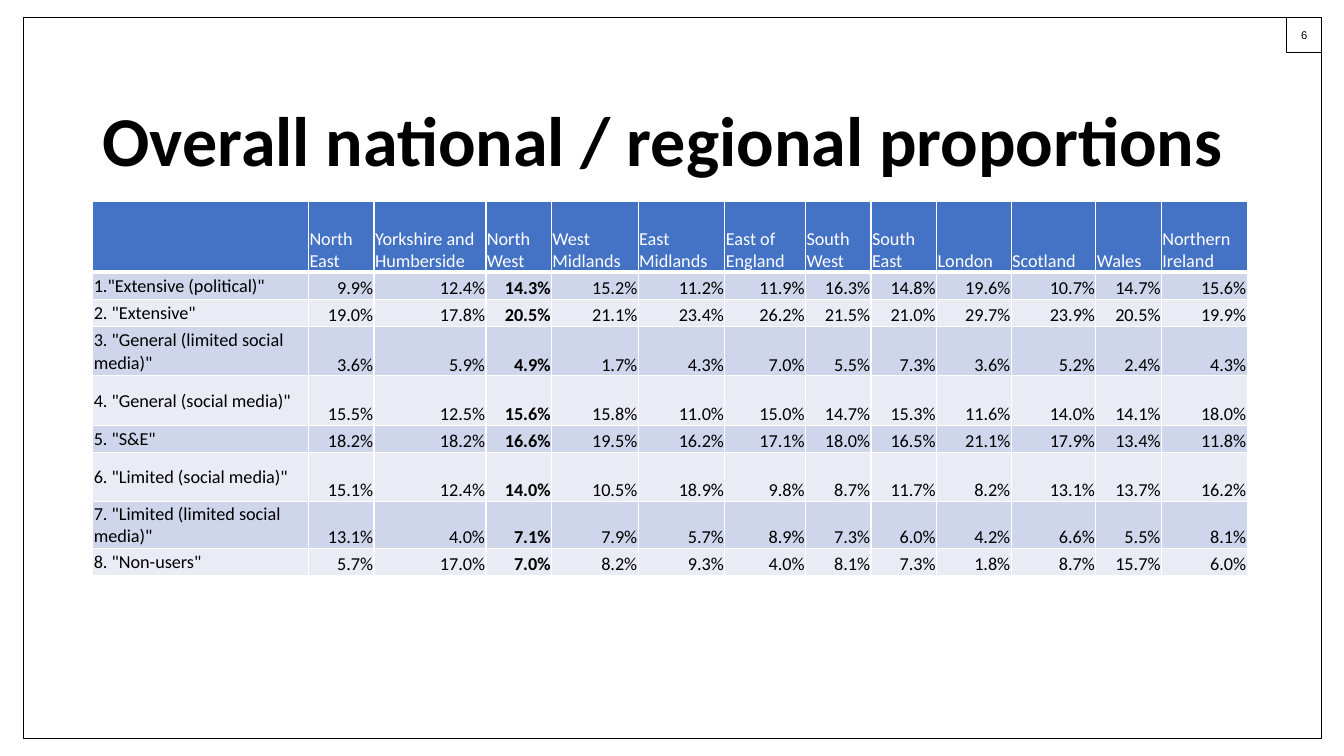
from lxml.etree import SubElement
from pptx import Presentation
from pptx.dml.color import RGBColor
from pptx.enum.shapes import MSO_SHAPE
from pptx.enum.text import MSO_ANCHOR, PP_ALIGN
from pptx.oxml.ns import qn
from pptx.util import Inches, Pt

BLACK, WHITE = "000000", "FFFFFF"
HEADER_FILL, BAND_FILLS = "4472C4", ("CFD5EA", "E9EBF5")
HIGHLIGHTED_REGION = "North West"
REGIONS = [
    ("North East", 0.65), ("Yorkshire and Humberside", 1.11), ("North West", 0.65),
    ("West Midlands", 0.86), ("East Midlands", 0.86), ("East of England", 0.8),
    ("South West", 0.65), ("South East", 0.65), ("London", 0.74),
    ("Scotland", 0.84), ("Wales", 0.65), ("Northern Ireland", 0.85),
]
LABEL_WIDTH, HEADER_HEIGHT = 2.14, 0.7
USER_GROUPS = [
    ('1."Extensive (political)"', 0.27,
     (9.9, 12.4, 14.3, 15.2, 11.2, 11.9, 16.3, 14.8, 19.6, 10.7, 14.7, 15.6)),
    ('2. "Extensive"', 0.27,
     (19.0, 17.8, 20.5, 21.1, 23.4, 26.2, 21.5, 21.0, 29.7, 23.9, 20.5, 19.9)),
    ('3. "General (limited social media)"', 0.49,
     (3.6, 5.9, 4.9, 1.7, 4.3, 7.0, 5.5, 7.3, 3.6, 5.2, 2.4, 4.3)),
    ('4. "General (social media)"', 0.49,
     (15.5, 12.5, 15.6, 15.8, 11.0, 15.0, 14.7, 15.3, 11.6, 14.0, 14.1, 18.0)),
    ('5. "S&E"', 0.27,
     (18.2, 18.2, 16.6, 19.5, 16.2, 17.1, 18.0, 16.5, 21.1, 17.9, 13.4, 11.8)),
    ('6. "Limited (social media)"', 0.49,
     (15.1, 12.4, 14.0, 10.5, 18.9, 9.8, 8.7, 11.7, 8.2, 13.1, 13.7, 16.2)),
    ('7. "Limited (limited social media)"', 0.46,
     (13.1, 4.0, 7.1, 7.9, 5.7, 8.9, 7.3, 6.0, 4.2, 6.6, 5.5, 8.1)),
    ('8. "Non-users"', 0.27,
     (5.7, 17.0, 7.0, 8.2, 9.3, 4.0, 8.1, 7.3, 1.8, 8.7, 15.7, 6.0)),
]


def color(value):
    """Return the colour for a hex string."""
    return RGBColor.from_string(value)


def format_text(paragraph, size, font_name, font_color, bold=False):
    """Format every run of a paragraph."""
    for run in paragraph.runs:
        run.font.size = Pt(size)
        run.font.name = font_name
        run.font.bold = bold
        run.font.color.rgb = color(font_color)


def add_outline(slide, left, top, width, height):
    """Add an unfilled rectangle with a thin black line."""
    shape = slide.shapes.add_shape(
        MSO_SHAPE.RECTANGLE, Inches(left), Inches(top), Inches(width), Inches(height))
    shape.shadow.inherit = False
    shape.fill.background()
    shape.line.color.rgb = color(BLACK)
    shape.line.width = Pt(0.5)
    return shape


def add_frame(slide, left, top, width, height, number):
    """Add the slide frame with the page number in its top right corner."""
    side = 0.35
    number_box = add_outline(slide, left + width - side, top, side, side)
    text_frame = number_box.text_frame
    text_frame.margin_left = text_frame.margin_right = 0
    text_frame.vertical_anchor = MSO_ANCHOR.MIDDLE
    text_frame.text = number
    paragraph = text_frame.paragraphs[0]
    paragraph.alignment = PP_ALIGN.CENTER
    format_text(paragraph, 8, "Arial", BLACK)
    add_outline(slide, left, top, width, height)


def add_title(slide, left, top, width, height, title):
    """Add the slide title at the bottom of its box."""
    text_box = slide.shapes.add_textbox(
        Inches(left), Inches(top), Inches(width), Inches(height))
    text_frame = text_box.text_frame
    text_frame.word_wrap = True
    text_frame.vertical_anchor = MSO_ANCHOR.BOTTOM
    text_frame.text = title
    paragraph = text_frame.paragraphs[0]
    paragraph.line_spacing = 0.9
    format_text(paragraph, 50, "Calibri", BLACK, bold=True)


def set_borders(cell, bottom_width):
    """Give a cell white borders, one point wide except at the bottom."""
    properties = cell._tc.get_or_add_tcPr()
    for side, width in (("L", 1), ("R", 1), ("T", 1), ("B", bottom_width)):
        line = SubElement(properties, qn(f"a:ln{side}"), w=str(Pt(width)))
        fill = SubElement(line, qn("a:solidFill"))
        SubElement(fill, qn("a:srgbClr"), val=WHITE)


def fill_cell(cell, text, row, column):
    """Write one table cell and style it by its row and column."""
    is_header, is_label = row == 0, column == 0
    set_borders(cell, 3 if is_header else 1)
    cell.fill.solid()
    cell.fill.fore_color.rgb = color(HEADER_FILL if is_header else BAND_FILLS[(row - 1) % 2])
    cell.margin_left = cell.margin_right = cell.margin_top = Inches(0.01)
    cell.margin_bottom = 0
    cell.vertical_anchor = (
        MSO_ANCHOR.MIDDLE if is_label and not is_header else MSO_ANCHOR.BOTTOM)
    cell.text_frame.text = text
    paragraph = cell.text_frame.paragraphs[0]
    paragraph.alignment = PP_ALIGN.LEFT if is_header or is_label else PP_ALIGN.RIGHT
    highlighted = (
        not is_header and not is_label and REGIONS[column - 1][0] == HIGHLIGHTED_REGION)
    format_text(paragraph, 13, "Calibri", WHITE if is_header else BLACK, highlighted)


def add_proportions_table(slide, left, top, width, height):
    """Add the table of user groups by region."""
    rows = [["", *(region for region, _ in REGIONS)]]
    rows += [[label, *(f"{value:.1f}%" for value in values)]
             for label, _, values in USER_GROUPS]
    table = slide.shapes.add_table(
        len(rows), len(rows[0]),
        Inches(left), Inches(top), Inches(width), Inches(height)).table
    column_widths = [LABEL_WIDTH, *(column_width for _, column_width in REGIONS)]
    for column, column_width in zip(table.columns, column_widths):
        column.width = Inches(column_width)
    row_heights = [HEADER_HEIGHT, *(row_height for _, row_height, _ in USER_GROUPS)]
    for row, row_height in zip(table.rows, row_heights):
        row.height = Inches(row_height)
    for row_index, texts in enumerate(rows):
        for column_index, text in enumerate(texts):
            fill_cell(table.cell(row_index, column_index), text, row_index, column_index)


def main():
    """Build the slide and save the presentation."""
    presentation = Presentation()
    presentation.slide_width = Inches(13.33)
    presentation.slide_height = Inches(7.5)
    slide = presentation.slides.add_slide(presentation.slide_layouts[6])
    add_frame(slide, 0.23, 0.17, 12.88, 7.16, "6")
    add_title(slide, 0.92, 0.4, 11.5, 1.45, "Overall national / regional proportions")
    add_proportions_table(slide, 0.92, 2, 11.5, 3.7)
    presentation.save("out.pptx")


if __name__ == "__main__":
    main()
